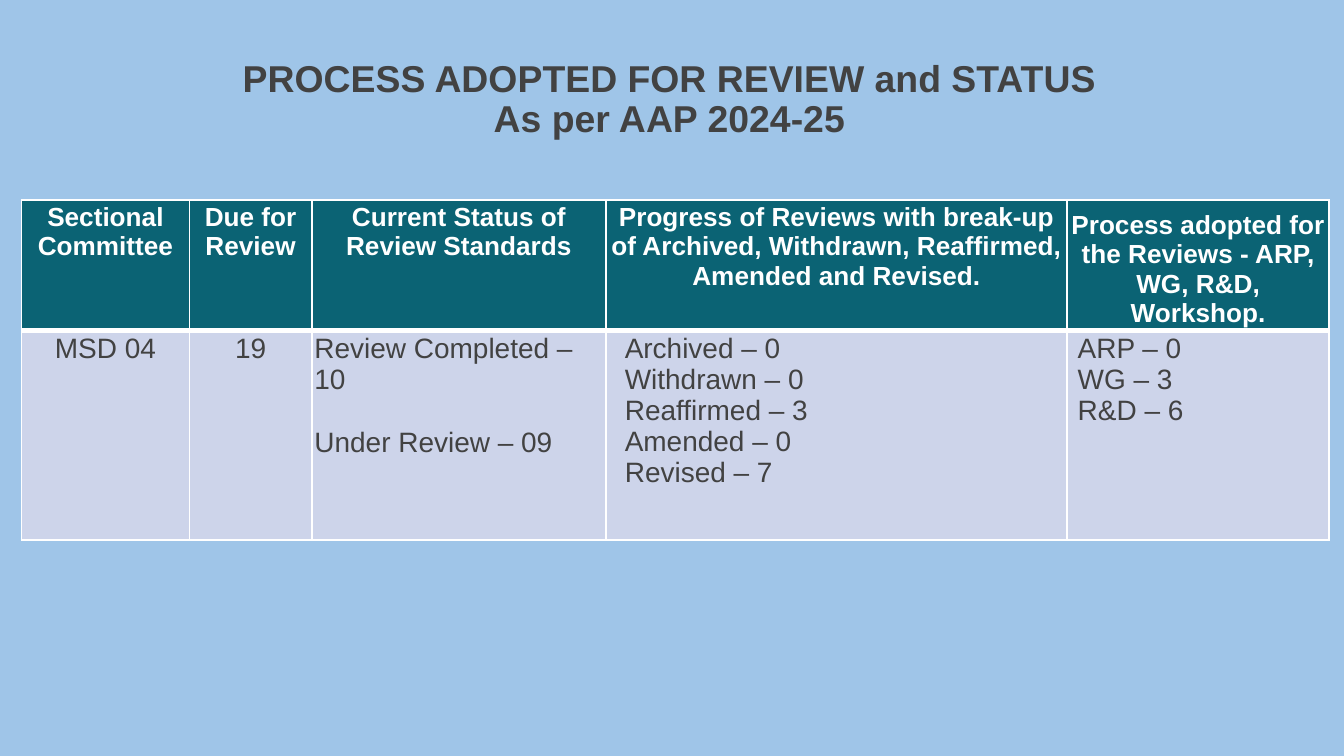
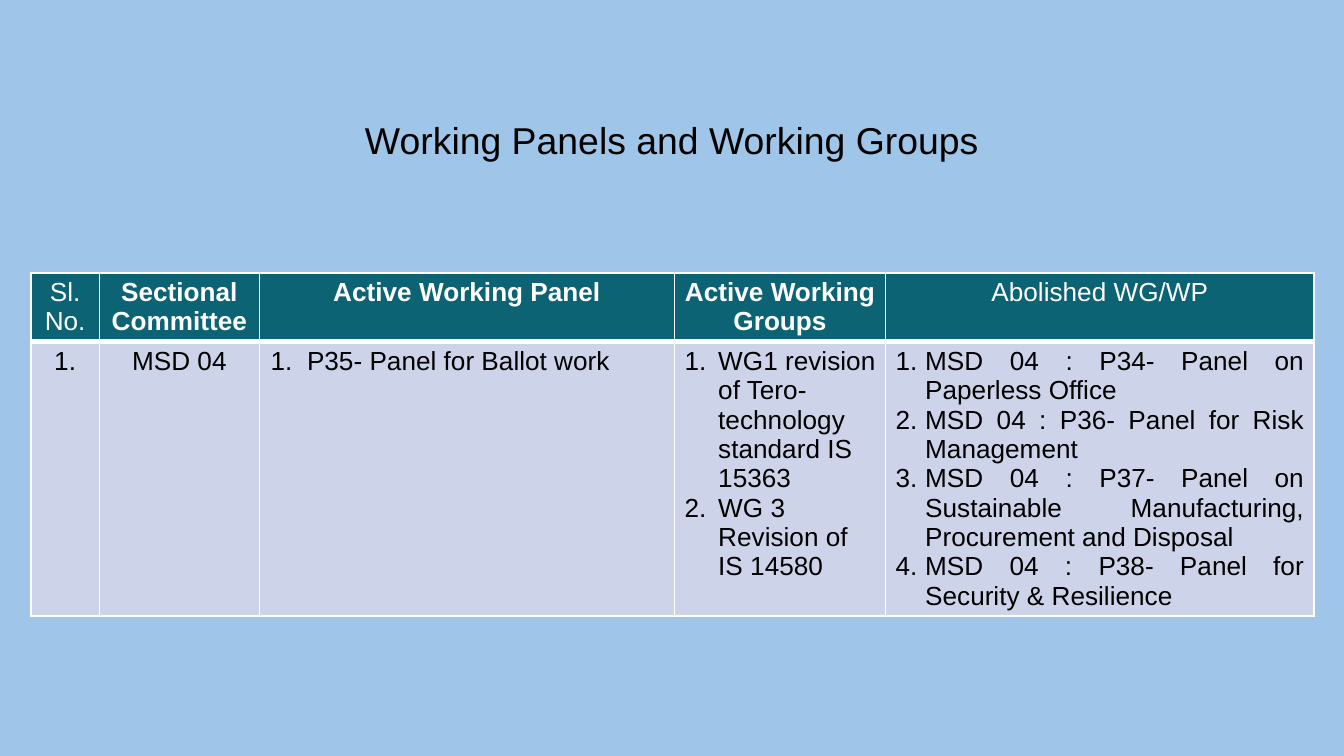
from dataclasses import dataclass

from lxml import etree
from pptx import Presentation
from pptx.dml.color import RGBColor
from pptx.enum.text import MSO_ANCHOR, MSO_AUTO_SIZE, PP_ALIGN
from pptx.oxml.ns import qn
from pptx.util import Inches, Pt

LEFT, CENTER, JUSTIFY = PP_ALIGN.LEFT, PP_ALIGN.CENTER, PP_ALIGN.JUSTIFY
TOP, MIDDLE, BOTTOM = MSO_ANCHOR.TOP, MSO_ANCHOR.MIDDLE, MSO_ANCHOR.BOTTOM
TITLE_ONLY = 5


@dataclass(frozen=True)
class Theme:
    font: str = "Arial"
    background: str = "9FC5E8"
    header: str = "0B6374"
    body: str = "CDD4EA"
    white: str = "FFFFFF"
    grey: str = "424242"
    black: str = "000000"
    title_size: int = 20
    header_size: int = 14
    thin: int = 1
    thick: int = 3


THEME = Theme()


@dataclass(frozen=True)
class Column:
    width: float
    heading: str
    items: tuple
    align: int = CENTER
    indent: float = 0
    hanging: float = 0      # a hanging indent makes the items a numbered list
    gap: int = 0            # points between the items
    bold: bool = True
    anchor: int = TOP


# Boxes, columns and rows are in inches, cell margins (side, top) in points.
SLIDES = [
    dict(
        title=["PROCESS ADOPTED FOR REVIEW and STATUS ", "As per AAP 2024-25 "],
        title_box=(0.71, 0.37, 8.62, 0.75), title_bold=True,
        color=THEME.grey, body_size=15,
        table_at=(0.16, 1.49), rows=(0.97, 1.56), margins=(1.4, 1.4),
        columns=[
            Column(1.25, "Sectional Committee", ("MSD 04",)),
            Column(0.91, "Due for Review", ("19",)),
            Column(2.19, "Current Status of Review Standards",
                   ("Review Completed – 10", "Under Review – 09"), LEFT, gap=17),
            Column(3.43, "Progress of Reviews with break-up of Archived, "
                   "Withdrawn, Reaffirmed, Amended and Revised.",
                   ("Archived – 0", "Withdrawn – 0", "Reaffirmed – 3",
                    "Amended – 0", "Revised – 7"), LEFT, indent=0.12),
            Column(1.95, "Process adopted for the Reviews - ARP, WG, R&D, Workshop.",
                   ("ARP – 0", "WG – 3", "R&D – 6"), LEFT, indent=0.06,
                   anchor=BOTTOM),
        ],
    ),
    dict(
        title=["Working Panels and Working Groups"],
        title_box=(0.69, 0.75, 8.62, 0.62), title_bold=False,
        color=THEME.black, body_size=14,
        table_at=(0.23, 2.03), rows=(0.51, 2.04), margins=(5.4, 2.7),
        columns=[
            Column(0.51, "Sl. No.", ("1.",), bold=False),
            Column(1.19, "Sectional Committee", ("MSD 04",)),
            Column(3.09, "Active Working Panel", ("P35- Panel for Ballot work",),
                   LEFT, indent=0.28, hanging=0.27),
            Column(1.57, "Active Working Groups",
                   ("WG1 revision of Tero-technology standard IS 15363",
                    "WG 3 Revision of IS 14580"),
                   LEFT, indent=0.25, hanging=0.25),
            Column(3.19, "Abolished WG/WP",
                   ("MSD 04 : P34- Panel on Paperless Office",
                    "MSD 04 : P36- Panel for Risk Management",
                    "MSD 04 : P37- Panel on Sustainable Manufacturing, "
                    "Procurement and Disposal",
                    "MSD 04 : P38- Panel for Security & Resilience"),
                   JUSTIFY, indent=0.22, hanging=0.22, bold=False),
        ],
    ),
]


def write(tf, texts, size, color, bold=False, align=CENTER):
    """Put each text in its own paragraph and return the paragraphs."""
    for i, text in enumerate(texts):
        p = tf.paragraphs[0] if i == 0 else tf.add_paragraph()
        p.alignment = align
        r = p.add_run()
        r.text = text
        r.font.name, r.font.size, r.font.bold = THEME.font, Pt(size), bold
        r.font.color.rgb = RGBColor.from_string(color)
    return tf.paragraphs


def add_color(parent, tag, color):
    holder = etree.SubElement(parent, qn(tag))
    etree.SubElement(holder, qn("a:srgbClr"), val=color)


def format_list(paragraphs, column, color):
    for i, p in enumerate(paragraphs):
        if i and column.gap:
            p.space_before = Pt(column.gap)
        pPr = p._p.get_or_add_pPr()
        pPr.set("marL", str(Inches(column.indent)))
        pPr.set("indent", str(-Inches(column.hanging)))
        if column.hanging:
            add_color(pPr, "a:buClr", color)
            etree.SubElement(pPr, qn("a:buAutoNum"), type="arabicPeriod")


def style_cell(cell, fill, margins, anchor=TOP, top=THEME.thin, bottom=THEME.thin):
    tcPr = cell._tc.get_or_add_tcPr()
    for side, width in zip("LRTB", (THEME.thin, THEME.thin, top, bottom)):
        ln = etree.SubElement(tcPr, qn(f"a:ln{side}"), w=str(Pt(width)))
        add_color(ln, "a:solidFill", THEME.white)
    cell.fill.solid()
    cell.fill.fore_color.rgb = RGBColor.from_string(fill)
    cell.margin_left = cell.margin_right = Pt(margins[0])
    cell.margin_top = cell.margin_bottom = Pt(margins[1])
    cell.vertical_anchor = anchor


def add_title(s, content):
    sp = s.shapes.title
    sp.left, sp.top, sp.width, sp.height = map(Inches, content["title_box"])
    tf = sp.text_frame
    tf.word_wrap, tf.auto_size = True, MSO_AUTO_SIZE.NONE
    tf.vertical_anchor = MIDDLE
    tf.margin_left = tf.margin_right = Inches(0.07)
    tf.margin_top = tf.margin_bottom = Inches(0.04)
    for p in write(tf, content["title"], THEME.title_size, content["color"],
                   content["title_bold"]):
        p.line_spacing = 0.9
        p.space_before = Pt(0)


def add_table(s, content):
    columns, rows, margins = content["columns"], content["rows"], content["margins"]
    left, top = content["table_at"]
    width = sum(c.width for c in columns)
    table = s.shapes.add_table(len(rows), len(columns), Inches(left), Inches(top),
                               Inches(width), Inches(sum(rows))).table
    for row, height in zip(table.rows, rows):
        row.height = Inches(height)
    for i, column in enumerate(columns):
        table.columns[i].width = Inches(column.width)
        head, body = table.cell(0, i), table.cell(1, i)
        style_cell(head, THEME.header, margins, column.anchor, bottom=THEME.thick)
        write(head.text_frame, [column.heading], THEME.header_size, THEME.white,
              column.bold)
        style_cell(body, THEME.body, margins, top=THEME.thick)
        items = write(body.text_frame, column.items, content["body_size"],
                      content["color"], align=column.align)
        format_list(items, column, content["color"])


def main():
    prs = Presentation()
    prs.slide_width = Inches(10)
    prs.slide_height = prs.slide_width * 9 // 16
    fill = prs.slide_master.background.fill
    fill.solid()
    fill.fore_color.rgb = RGBColor.from_string(THEME.background)
    for content in SLIDES:
        s = prs.slides.add_slide(prs.slide_layouts[TITLE_ONLY])
        add_title(s, content)
        add_table(s, content)
    prs.save("out.pptx")


if __name__ == "__main__":
    main()
